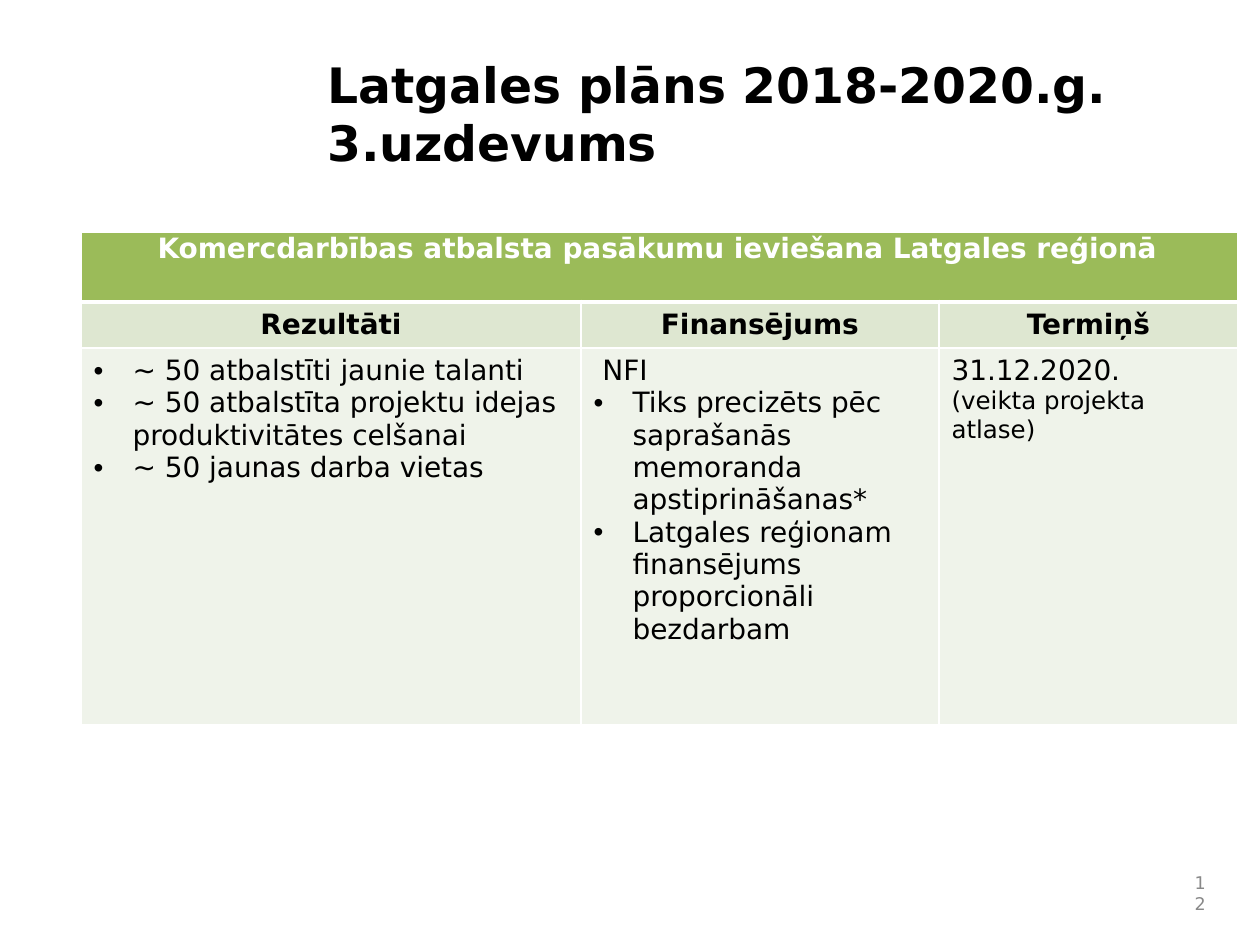
"""Builds the Latgale plan slide with its task table."""
import pptx
import pptx.chart.data
import pptx.dml.color
import pptx.enum.text
import pptx.oxml
import pptx.oxml.ns
import pptx.util
from lxml import etree

RGB = pptx.dml.color.RGBColor
ALIGN = pptx.enum.text.PP_ALIGN
ANCHOR = pptx.enum.text.MSO_ANCHOR
qn = pptx.oxml.ns.qn

BLACK = RGB(0x00, 0x00, 0x00)
WHITE = RGB(0xFF, 0xFF, 0xFF)
GREY = RGB(0x89, 0x89, 0x89)
GREEN = RGB(0x9B, 0xBB, 0x59)
PALE_GREEN = RGB(0xDE, 0xE7, 0xD1)
MIST_GREEN = RGB(0xEF, 0xF3, 0xEA)
FONT = "DejaVu Sans"

TITLE = "Latgales plāns 2018-2020.g.\v3.uzdevums"
PAGE_NUMBER = "12"
TASK = "Komercdarbības atbalsta pasākumu ieviešana Latgales reģionā"
HEADINGS = ["Rezultāti", "Finansējums", "Termiņš"]
DETAILS = [
    [
        ("~ 50 atbalstīti jaunie talanti", True, 16),
        ("~ 50 atbalstīta projektu idejas produktivitātes celšanai", True, 16),
        ("~ 50 jaunas darba vietas", True, 16),
    ],
    [
        (" NFI", False, 16),
        ("Tiks precizēts pēc saprašanās memoranda apstiprināšanas*", True, 16),
        ("Latgales reģionam finansējums proporcionāli bezdarbam", True, 16),
    ],
    [("31.12.2020.", False, 16), ("(veikta projekta atlase)", False, 14)],
]

SLIDE_SIZE = (1260, 945)
TITLE_BOX = (315, 48, 840, 142)
NUMBER_BOX = (1176, 872, 42, 42)
TABLE_ORIGIN = (81, 232)
COLUMN_WIDTHS = [500, 358, 299]
ROW_HEIGHTS = [70, 45, 377]
BULLET_INDENT = 39
TASK_INDENT = 64


def px(length):
    return round(length * 914400 / 126)


def write(paragraph, text, size, color, bold=False, align=ALIGN.LEFT):
    paragraph.text = text
    paragraph.alignment = align
    for run in paragraph.runs:
        run.font.name = FONT
        run.font.size = pptx.util.Pt(size)
        run.font.bold = bold
        run.font.color.rgb = color


def indent(paragraph, left, first=0):
    properties = paragraph._p.get_or_add_pPr()
    properties.set("marL", str(px(left)))
    properties.set("indent", str(px(first)))
    return properties


def add_bullet(paragraph):
    properties = indent(paragraph, BULLET_INDENT, -BULLET_INDENT)
    etree.SubElement(properties, qn("a:buFont"), typeface="Arial")
    etree.SubElement(properties, qn("a:buChar"), char="•")


def add_text(slide, box, text, size, color, **style):
    frame = slide.shapes.add_textbox(*map(px, box)).text_frame
    frame.word_wrap = True
    write(frame.paragraphs[0], text, size, color, **style)
    return frame


def style_cell(cell, fill, top, bottom):
    properties = cell._tc.get_or_add_tcPr()
    for side, width in (("L", 1), ("R", 1), ("T", top), ("B", bottom)):
        line = etree.SubElement(properties, qn(f"a:ln{side}"), w=str(pptx.util.Pt(width)))
        solid = etree.SubElement(line, qn("a:solidFill"))
        etree.SubElement(solid, qn("a:srgbClr"), val=str(WHITE))
    cell.fill.solid()
    cell.fill.fore_color.rgb = fill


def add_task_table(slide):
    table = slide.shapes.add_table(
        len(ROW_HEIGHTS), len(COLUMN_WIDTHS), *map(px, TABLE_ORIGIN),
        px(sum(COLUMN_WIDTHS)), px(sum(ROW_HEIGHTS)),
    ).table
    for column, width in zip(table.columns, COLUMN_WIDTHS):
        column.width = px(width)
    for row, height in zip(table.rows, ROW_HEIGHTS):
        row.height = px(height)

    row_styles = [(GREEN, 1, 3), (PALE_GREEN, 3, 1), (MIST_GREEN, 1, 1)]
    for row, row_style in zip(table.rows, row_styles):
        for cell in row.cells:
            style_cell(cell, *row_style)

    table.cell(0, 0).merge(table.cell(0, len(COLUMN_WIDTHS) - 1))
    task = table.cell(0, 0).text_frame.paragraphs[0]
    write(task, TASK, 16, WHITE, bold=True, align=ALIGN.JUSTIFY)
    indent(task, TASK_INDENT)
    task.line_spacing = 0.8

    for column, (heading, details) in enumerate(zip(HEADINGS, DETAILS)):
        heading_paragraph = table.cell(1, column).text_frame.paragraphs[0]
        write(heading_paragraph, heading, 16, BLACK, bold=True, align=ALIGN.CENTER)
        frame = table.cell(2, column).text_frame
        for number, (text, bulleted, size) in enumerate(details):
            paragraph = frame.add_paragraph() if number else frame.paragraphs[0]
            if bulleted:
                add_bullet(paragraph)
            write(paragraph, text, size, BLACK)


def main():
    deck = pptx.Presentation()
    deck.slide_width, deck.slide_height = map(px, SLIDE_SIZE)
    slide = deck.slides.add_slide(deck.slide_layouts[6])
    add_text(slide, TITLE_BOX, TITLE, 27.9, BLACK, bold=True)
    number = add_text(slide, NUMBER_BOX, PAGE_NUMBER, 10, GREY, align=ALIGN.RIGHT)
    number.vertical_anchor = ANCHOR.MIDDLE
    add_task_table(slide)
    deck.save("out.pptx")


if __name__ == "__main__":
    main()
